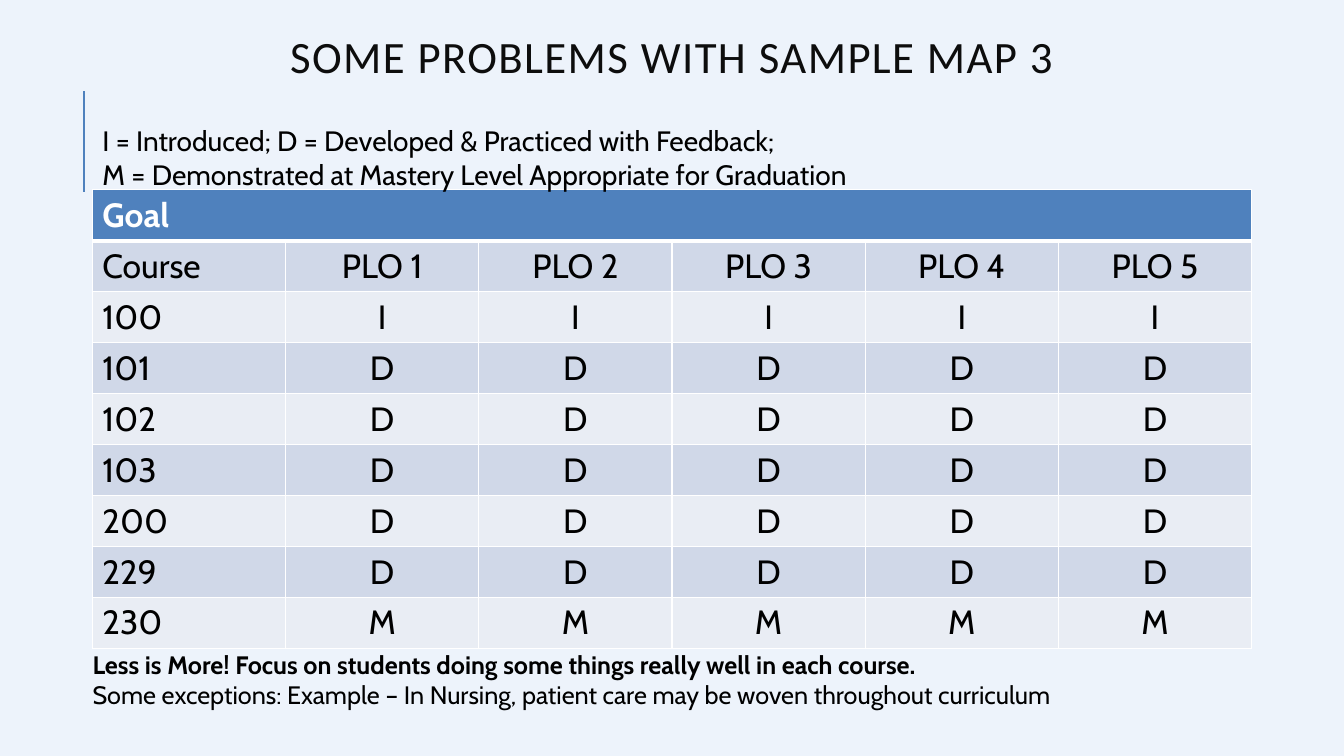
from dataclasses import dataclass

from lxml import etree
from pptx import Presentation
from pptx.dml.color import RGBColor
from pptx.enum.shapes import MSO_CONNECTOR
from pptx.enum.text import MSO_ANCHOR, MSO_AUTO_SIZE, PP_ALIGN
from pptx.oxml.ns import qn
from pptx.util import Emu, Inches, Pt

LEFT, CENTER = PP_ALIGN.LEFT, PP_ALIGN.CENTER
MIDDLE = MSO_ANCHOR.MIDDLE
NO_FIT = MSO_AUTO_SIZE.NONE
STRAIGHT = MSO_CONNECTOR.STRAIGHT

WIDE, HIGH = Inches(13.33), Inches(7.5)
COLS, ROWS = 160, 90
BLUE, WHITE, BLACK = "4F81BD", "FFFFFF", "000000"
BANDS = ("D0D8E8", "E9EDF4")

HEAD = ["Course"] + [f"PLO {n}" for n in range(1, 6)]
LEVELS = {"100": "I", "101": "D", "102": "D", "103": "D",
          "200": "D", "229": "D", "230": "M"}


@dataclass
class Box:
    col: float
    row: float
    wide: float
    high: float

    def place(self) -> tuple[Emu, Emu, Emu, Emu]:
        return across(self.col), down(self.row), across(self.wide), down(self.high)


@dataclass
class Line:
    text: str
    bold: bool = False


@dataclass
class Note:
    box: Box
    size: int
    lines: list[Line]


NOTES = [
    Note(Box(11, 14.16, 138, 9.2), 20, [
        Line("I = Introduced; D = Developed & Practiced with Feedback; "),
        Line("M = Demonstrated at Mastery Level Appropriate for Graduation")]),
    Note(Box(9.84, 76.7, 134.5, 8.5), 18, [
        Line("Less is More! Focus on students doing some things really well in each course.", True),
        Line("Some exceptions: Example – In Nursing, patient care may be woven throughout curriculum")]),
]


def across(cols: float) -> Emu:
    return Emu(round(WIDE * cols / COLS))


def down(rows: float) -> Emu:
    return Emu(round(HIGH * rows / ROWS))


def tint(code: str) -> RGBColor:
    return RGBColor.from_string(code)


def style(para, size: int, code: str = BLACK, face: str = "Cabin") -> None:
    para.font.size = Pt(size)
    para.font.name = face
    para.font.color.rgb = tint(code)


def add_title(slide) -> None:
    title = slide.shapes.title
    title.left, title.top, title.width, title.height = Box(11, 0.36, 138, 13.8).place()
    frame = title.text_frame
    frame.text = "SOME PROBLEMS WITH SAMPLE MAP 3"
    frame.auto_size = NO_FIT
    frame.vertical_anchor = MIDDLE
    para = frame.paragraphs[0]
    para.alignment = CENTER
    para.line_spacing = 0.8
    style(para, 32, "0D0D0D", "Calibri")
    para.runs[0]._r.get_or_add_rPr().set("spc", "100")


def add_rule(slide) -> None:
    rule = slide.shapes.add_connector(
        STRAIGHT, across(10), down(22.8), across(10), down(10.8))
    rule.line.color.rgb = tint(BLUE)
    rule.line.width = Pt(1.5)
    etree.SubElement(rule._element.spPr, qn("a:effectLst"))


def edge(cell, top: int, base: int) -> None:
    props = cell._tc.get_or_add_tcPr()
    for side, width in (("L", 1), ("R", 1), ("T", top), ("B", base)):
        line = etree.SubElement(props, qn(f"a:ln{side}"), w=str(Pt(width)))
        fill = etree.SubElement(line, qn("a:solidFill"))
        etree.SubElement(fill, qn("a:srgbClr"), val=WHITE)


def add_grid(slide) -> None:
    body = [HEAD] + [[name] + [level] * 5 for name, level in LEVELS.items()]
    table = [["Goal"] + [""] * 5] + body
    box = Box(11, 22.6, 138, 6 * len(table))
    grid = slide.shapes.add_table(len(table), len(HEAD), *box.place()).table
    grid.first_row = grid.horz_banding = False
    for r, row in enumerate(table):
        for c, text in enumerate(row):
            cell = grid.cell(r, c)
            edge(cell, 3 if r == 1 else 1, 3 if r == 0 else 1)
            cell.fill.solid()
            cell.fill.fore_color.rgb = tint(BANDS[(r - 1) % 2] if r else BLUE)
            cell.text = text
            para = cell.text_frame.paragraphs[0]
            para.alignment = CENTER if c else LEFT
            style(para, 24, BLACK if r else WHITE)
            para.font.bold = r == 0
    grid.cell(0, 0).merge(grid.cell(0, len(HEAD) - 1))


def add_note(slide, note: Note) -> None:
    frame = slide.shapes.add_textbox(*note.box.place()).text_frame
    frame.word_wrap = True
    para = frame.paragraphs[0]
    style(para, note.size)
    for n, line in enumerate(note.lines):
        if n:
            para.add_line_break()
        run = para.add_run()
        run.text = line.text
        run.font.bold = line.bold


def main() -> None:
    deck = Presentation()
    deck.slide_width, deck.slide_height = WIDE, HIGH
    slide = deck.slides.add_slide(deck.slide_layouts[5])
    back = slide.background.fill
    back.solid()
    back.fore_color.rgb = tint("EDF3FB")
    add_rule(slide)
    add_title(slide)
    add_grid(slide)
    for note in NOTES:
        add_note(slide, note)
    deck.save("out.pptx")


if __name__ == "__main__":
    main()
